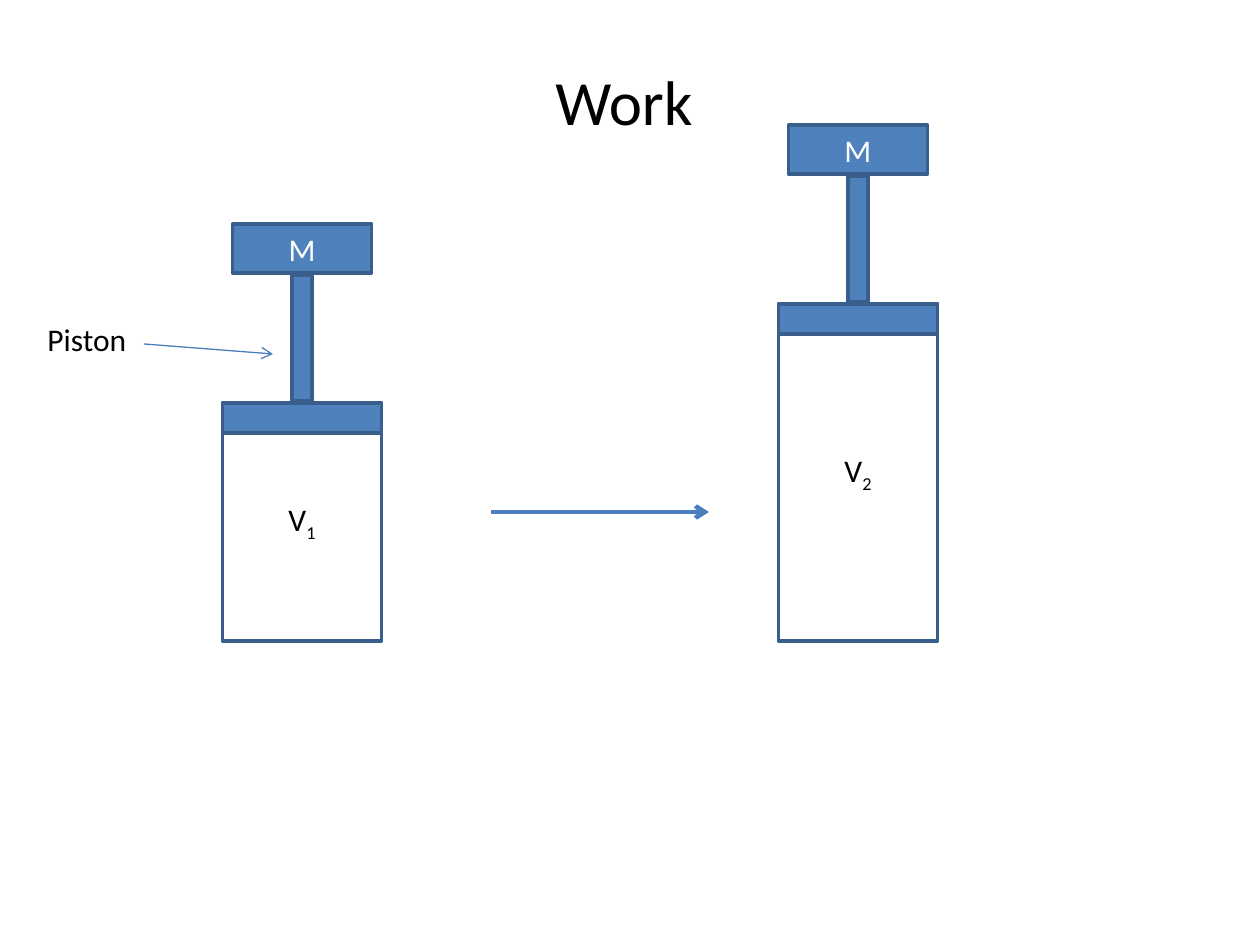
from lxml import etree
from pptx import Presentation
from pptx.dml.color import RGBColor
from pptx.enum.shapes import MSO_CONNECTOR, MSO_SHAPE
from pptx.enum.text import MSO_ANCHOR, PP_ALIGN
from pptx.oxml.ns import qn
from pptx.util import Emu, Pt

RECT, STRAIGHT = MSO_SHAPE.RECTANGLE, MSO_CONNECTOR.STRAIGHT
MIDDLE, CENTER, LEFT = MSO_ANCHOR.MIDDLE, PP_ALIGN.CENTER, PP_ALIGN.LEFT
PX = 914400 // 126
FONT = "Calibri"
BLUE, EDGE, ARROW, BLACK, WHITE = "4F81BD", "3A5F8C", "4B7EBC", "000000", "FFFFFF"

TITLE = "Work"
PISTON_LABEL = "Piston"
MASS_LABEL = "M"
# volume subscript, centre x, top of the piston head
CYLINDERS = [("1", 302, 403), ("2", 858, 304)]
# start, end, line width in points
ARROWS = [((491, 512), (709, 512), 2.5), ((144, 344), (273, 354), 0.75)]

BASE = 641
CYLINDER_W = 159
HEAD_H = 30
ROD_W, ROD_H, ROD_RISE = 20, 126, 128
MASS_W, MASS_H, MASS_RISE = 139, 49, 179


def px(n):
    return Emu(n * PX)


def color(value):
    return RGBColor.from_string(value)


def write(shape, runs, size=18, ink=BLACK, align=CENTER):
    """Fill the shape with (text, is_subscript) runs."""
    tf = shape.text_frame
    tf.word_wrap = True
    tf.vertical_anchor = MIDDLE
    p = tf.paragraphs[0]
    p.alignment = align
    for text, subscript in runs:
        r = p.add_run()
        r.text = text
        r.font.size = Pt(size)
        r.font.name = FONT
        r.font.color.rgb = color(ink)
        if subscript:
            r.font._element.set("baseline", "-25000")


def add_block(slide, center, top, width, height, fill=BLUE):
    sp = slide.shapes.add_shape(
        RECT, px(center) - px(width) // 2, px(top), px(width), px(height))
    sp.shadow.inherit = False
    if fill:
        sp.fill.solid()
        sp.fill.fore_color.rgb = color(fill)
    else:
        sp.fill.background()
    sp.line.color.rgb = color(EDGE)
    sp.line.width = Pt(2)
    return sp


def add_cylinder(slide, subscript, center, top):
    gas = add_block(slide, center, top, CYLINDER_W, BASE - top, fill=None)
    write(gas, [("V", False), (subscript, True)])
    add_block(slide, center, top, CYLINDER_W, HEAD_H)
    add_block(slide, center, top - ROD_RISE, ROD_W, ROD_H)
    mass = add_block(slide, center, top - MASS_RISE, MASS_W, MASS_H)
    write(mass, [(MASS_LABEL, False)], ink=WHITE)


def add_arrow(slide, start, end, width):
    line = slide.shapes.add_connector(STRAIGHT, *map(px, start + end))
    line.line.color.rgb = color(ARROW)
    line.line.width = Pt(width)
    etree.SubElement(line.line._get_or_add_ln(), qn("a:tailEnd"), type="arrow")
    etree.SubElement(line._element.spPr, qn("a:effectLst"))


def main():
    prs = Presentation()
    prs.slide_width, prs.slide_height = px(1260), px(945)
    slide = prs.slides.add_slide(prs.slide_layouts[5])

    title = slide.shapes.title
    title.left, title.top, title.width, title.height = map(px, (44, 55, 1160, 90))
    write(title, [(TITLE, False)], size=36)

    for cylinder in CYLINDERS:
        add_cylinder(slide, *cylinder)

    label = slide.shapes.add_textbox(*map(px, (35, 314, 179, 50)))
    write(label, [(PISTON_LABEL, False)], align=LEFT)
    for arrow in ARROWS:
        add_arrow(slide, *arrow)

    prs.save("out.pptx")


if __name__ == "__main__":
    main()
